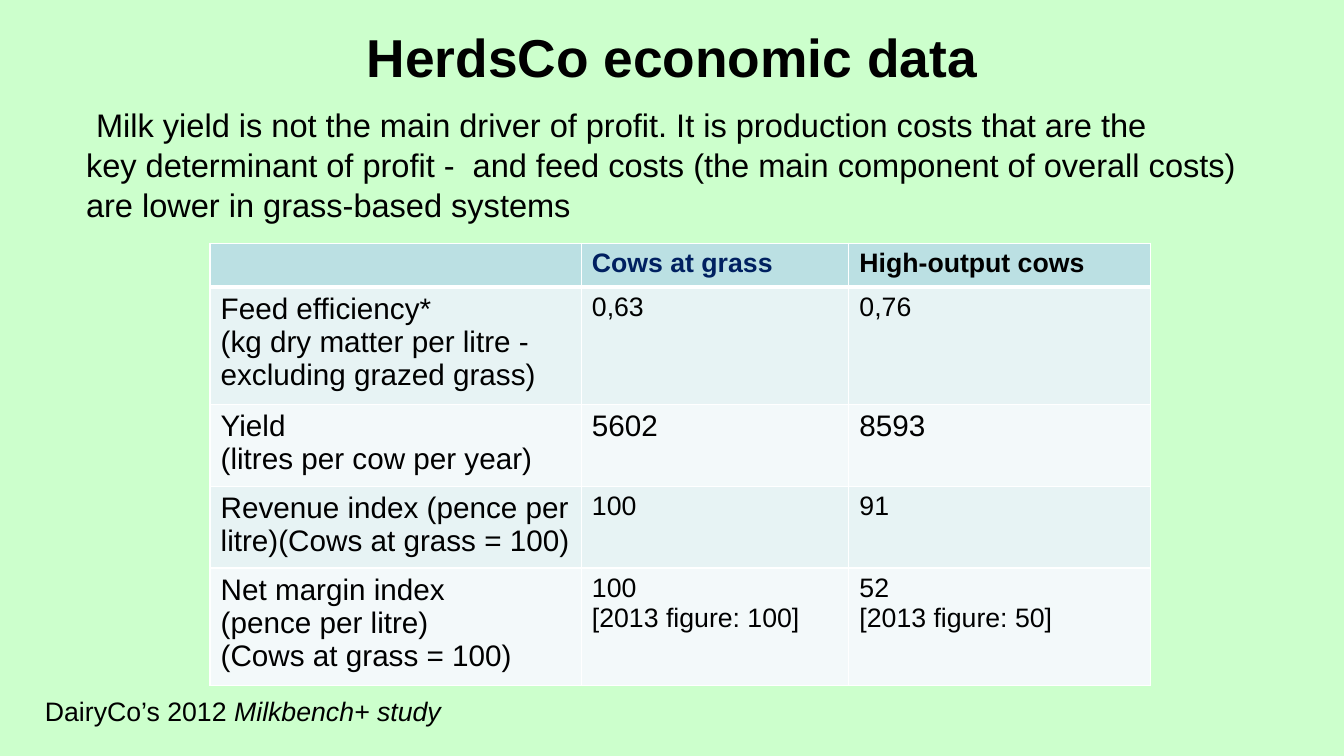
"""Build a slide comparing the economics of grass-fed and high-output cows."""
from dataclasses import dataclass

from lxml import etree
from pptx import Presentation
from pptx.dml.color import RGBColor
from pptx.enum import text
from pptx.oxml import ns
from pptx.util import Cm, Pt


@dataclass(frozen=True)
class Theme:
    font: str = "Arial"
    background: str = "CCFFCC"
    ink: str = "000000"
    navy: str = "002060"
    border: str = "FFFFFF"
    header: str = "BBE0E3"
    bands: tuple = ("E7F3F4", "F3F9FA")
    title: int = 36
    body: int = 22
    label: int = 20
    small: int = 18


THEME = Theme()
COLUMNS = (8.84, 6.37, 7.19)
ROW_HEIGHT = 1.04
HEADINGS = (("", THEME.ink), ("Cows at grass", THEME.navy),
            ("High-output cows", THEME.ink))
MEASURES = (
    ("Feed efficiency*\n(kg dry matter per litre - excluding grazed grass)",
     "0,63", "0,76", THEME.small),
    ("Yield\n(litres per cow per year)", "5602", "8593", THEME.label),
    ("Revenue index (pence per litre)(Cows at grass = 100)",
     "100", "91", THEME.small),
    ("Net margin index\n(pence per litre)\n(Cows at grass = 100)",
     "100\n[2013 figure: 100]", "52\n[2013 figure: 50]", THEME.small),
)


def apply(obj, **values):
    for name, value in values.items():
        setattr(obj, name, value)


def style(font, size, color=THEME.ink, **values):
    apply(font, name=THEME.font, size=Pt(size), **values)
    font.color.rgb = RGBColor.from_string(color)


def add_text(slide, box, paragraphs, size, para=None, frame=None, **font):
    sp = slide.shapes.add_textbox(*map(Cm, box))
    tf = sp.text_frame
    apply(tf, **{"word_wrap": True, **(frame or {})})
    for i, runs in enumerate(paragraphs):
        p = tf.add_paragraph() if i else tf.paragraphs[0]
        apply(p, **(para or {}))
        for words, extra in runs:
            r = p.add_run()
            r.text = words
            style(r.font, size, **font, **extra)
    return tf


def set_borders(cell, bottom):
    tc_pr = cell._tc.get_or_add_tcPr()
    widths = {"lnL": 1, "lnR": 1, "lnT": 1, "lnB": bottom}
    for i, (side, width) in enumerate(widths.items()):
        ln = etree.Element(ns.qn(f"a:{side}"), w=str(Pt(width)))
        fill = etree.SubElement(ln, ns.qn("a:solidFill"))
        etree.SubElement(fill, ns.qn("a:srgbClr"), val=THEME.border)
        tc_pr.insert(i, ln)


def fill_cell(cell, words, fill, size, color=THEME.ink, bold=False, bottom=1):
    cell.text = words
    for p in cell.text_frame.paragraphs:
        style(p.font, size, color, bold=bold)
        for r in p.runs:
            style(r.font, size, color, bold=bold)
    cell.fill.solid()
    cell.fill.fore_color.rgb = RGBColor.from_string(fill)
    set_borders(cell, bottom)


def add_comparison(slide):
    rows = len(MEASURES) + 1
    table = slide.shapes.add_table(
        rows, len(COLUMNS), Cm(5), Cm(5.79),
        Cm(sum(COLUMNS)), Cm(rows * ROW_HEIGHT)).table
    for column, width in zip(table.columns, COLUMNS):
        column.width = Cm(width)
    for c, (heading, color) in enumerate(HEADINGS):
        fill_cell(table.cell(0, c), heading, THEME.header, THEME.small,
                  color, bold=True, bottom=3)
    for i, (label, grass, high, size) in enumerate(MEASURES):
        band = THEME.bands[i % 2]
        fill_cell(table.cell(i + 1, 0), label, band, THEME.label)
        for c, value in enumerate((grass, high), 1):
            fill_cell(table.cell(i + 1, c), value, band, size)


def main():
    prs = Presentation()
    apply(prs, slide_width=Cm(32), slide_height=Cm(18))
    slide = prs.slides.add_slide(prs.slide_layouts[6])
    background = slide.background.fill
    background.solid()
    background.fore_color.rgb = RGBColor.from_string(THEME.background)

    add_text(slide, (1.6, 0.71, 28.8, 1.27), [[("HerdsCo economic data", {})]],
             THEME.title, para={"alignment": text.PP_ALIGN.CENTER},
             frame={"vertical_anchor": text.MSO_ANCHOR.MIDDLE}, bold=True)
    add_comparison(slide)
    message = add_text(
        slide, (1.8, 2.36, 29.21, 3.15),
        [[("Milk yield is not the main driver of profit. "
           "It is production costs that are the", {})],
         [("key determinant of profit -  and feed costs (the main component "
           "of overall costs) are lower in grass-based systems", {})]],
        THEME.body, para={"line_spacing": 1.02})
    message.paragraphs[0]._p.get_or_add_pPr().set("indent", str(Cm(0.24)))
    add_text(slide, (0.82, 16.41, 10, 1.02),
             [[("DairyCo’s 2012 ", {}), ("Milkbench+ study", {"italic": True})]],
             THEME.small, frame={"word_wrap": False})
    prs.save("out.pptx")


if __name__ == "__main__":
    main()
